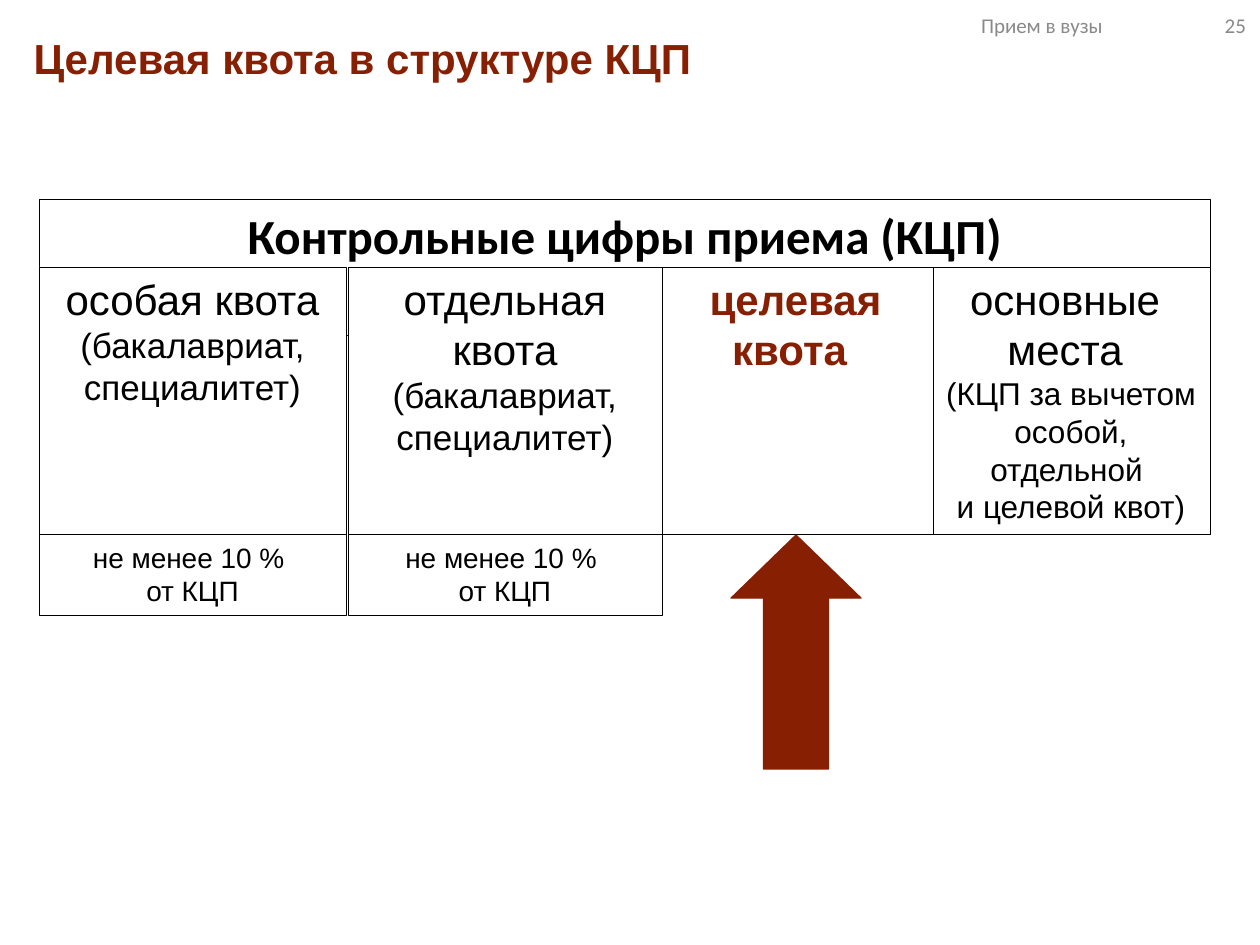
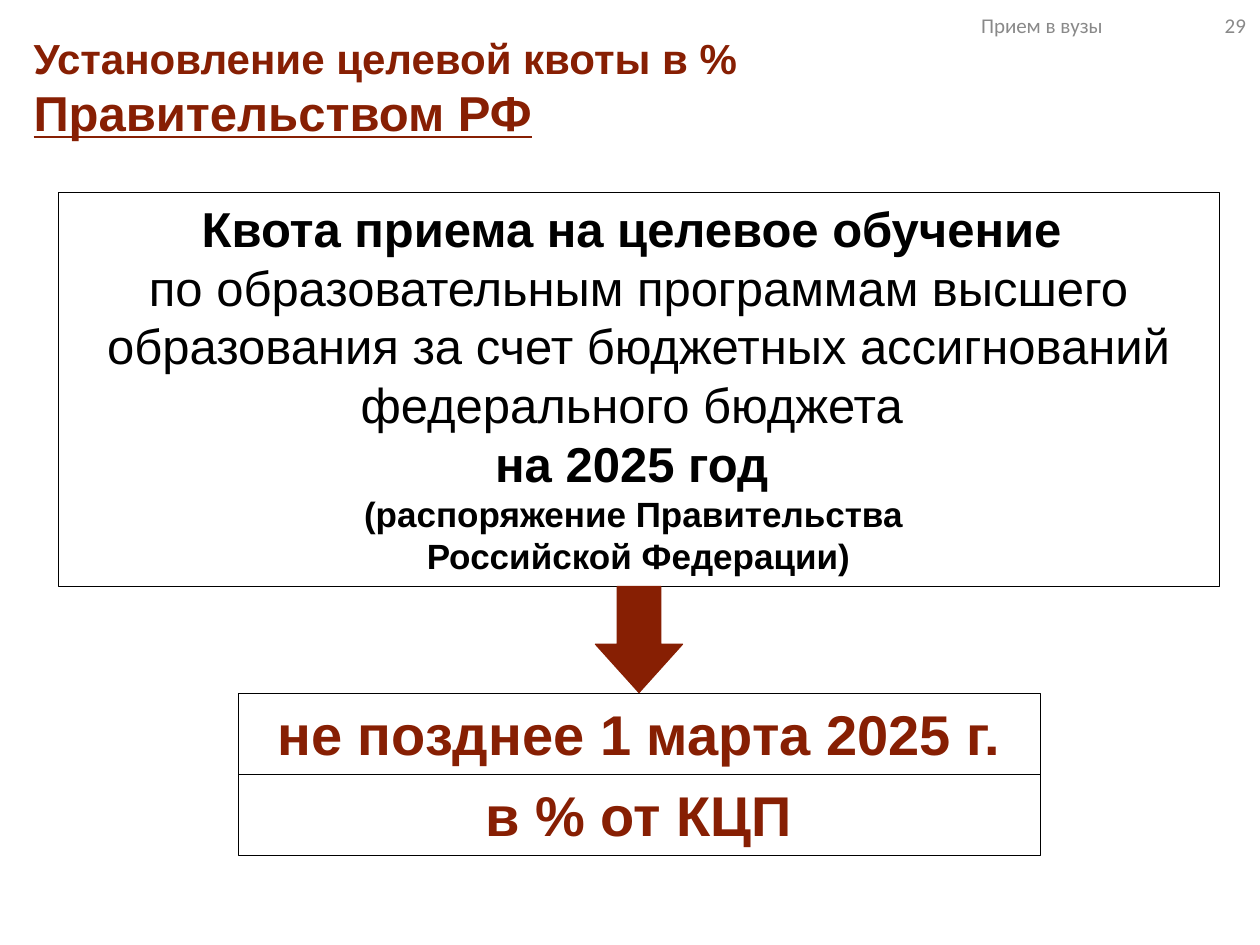
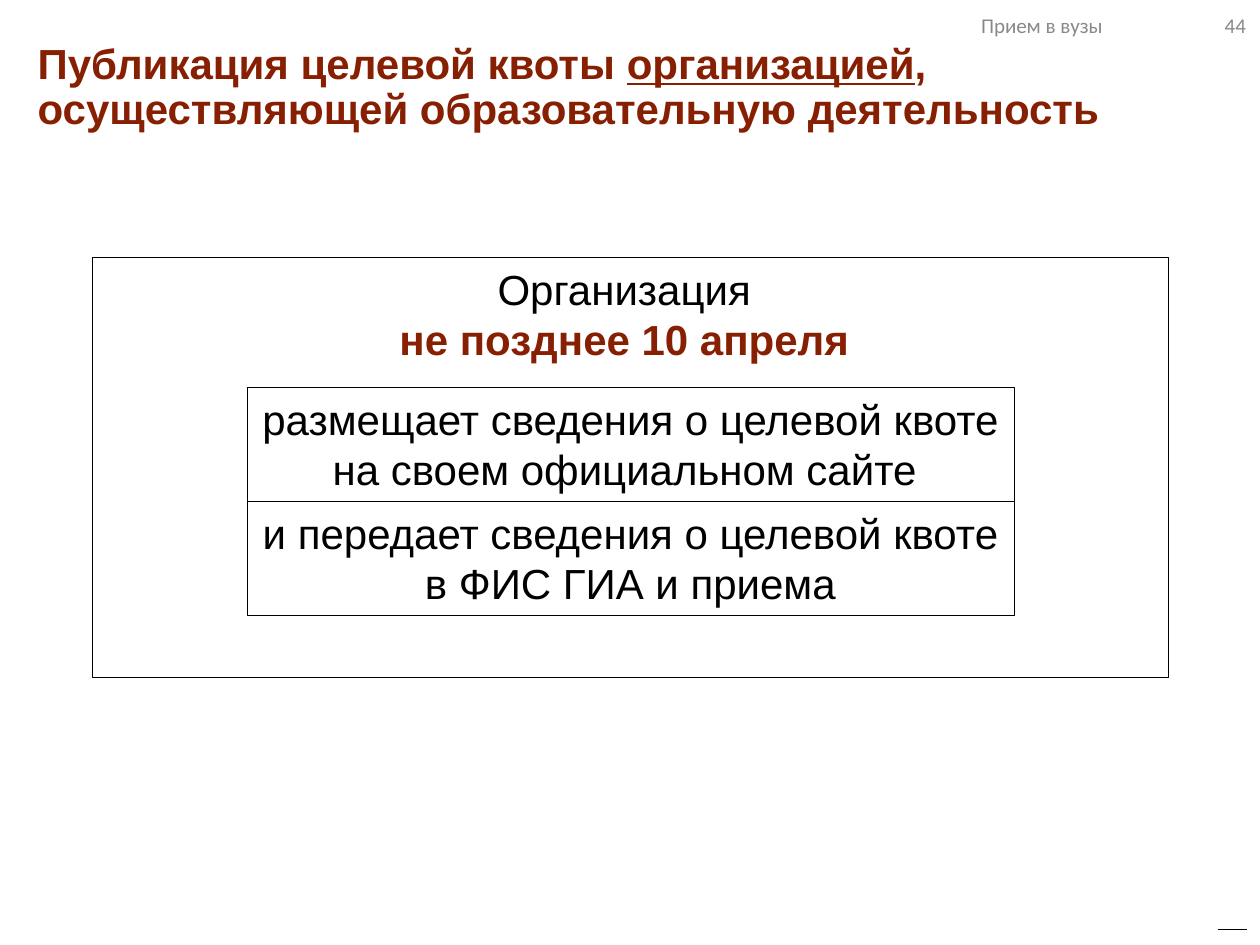
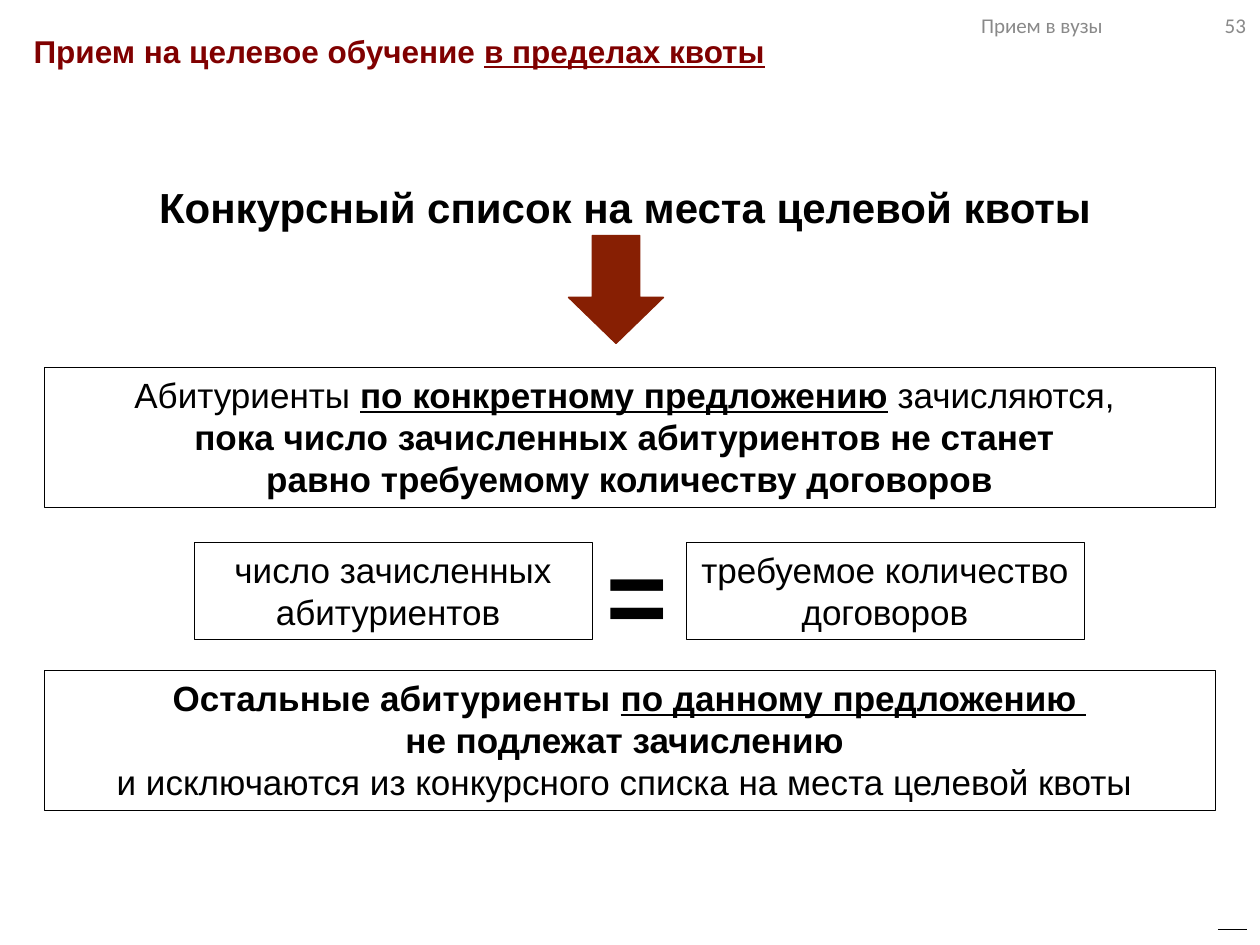
from lxml.etree import SubElement
from pptx import Presentation
from pptx.dml.color import RGBColor
from pptx.enum.shapes import MSO_CONNECTOR, MSO_SHAPE
from pptx.enum.text import MSO_ANCHOR, MSO_AUTO_SIZE, PP_ALIGN
from pptx.oxml.ns import qn
from pptx.util import Emu, Pt

WIDTH, HEIGHT = 1260, 945
EMU_PER_PX = 914400 / 126

BLACK = RGBColor(0x00, 0x00, 0x00)
WHITE = RGBColor(0xFF, 0xFF, 0xFF)
GRAY = RGBColor(0x89, 0x89, 0x89)
BRICK = RGBColor(0x87, 0x1F, 0x03)
MAROON = RGBColor(0x80, 0x00, 0x00)

BODY = dict(name="Arial", size=20, color=BLACK, bold=False, underline=False)
TITLE = dict(BODY, size=24, color=BRICK, bold=True)
FOOTER = dict(BODY, name="Calibri", size=12, color=GRAY)
BOLD = dict(bold=True)
UNDERLINE = dict(underline=True)

TITLE_BOX = (21, 26, 1235, 59)
FOOTER_BOX = (888, 0, 372, 50)
FOOTER_INSET, FOOTER_TAB = 93, 265


def px(n):
    return Emu(round(n * EMU_PER_PX))


def place(box):
    return [px(n) for n in box]


def write(tf, paragraphs, base=BODY, align=PP_ALIGN.CENTER, spacing=None):
    """Fill a frame; a paragraph is a string or a list of (text, format) runs."""
    tf.word_wrap = True
    for i, runs in enumerate(paragraphs):
        p = tf.paragraphs[0] if i == 0 else tf.add_paragraph()
        p.alignment, p.line_spacing = align, spacing
        for text, changes in [(runs, {})] if isinstance(runs, str) else runs:
            r = p.add_run()
            r.text = text
            for key, value in (base | changes).items():
                if key == "color":
                    r.font.color.rgb = value
                else:
                    setattr(r.font, key, Pt(value) if key == "size" else value)


def add_box(s, box, paragraphs, border=True, **changes):
    sp = s.shapes.add_shape(MSO_SHAPE.RECTANGLE, *place(box))
    sp.shadow.inherit = False
    sp.fill.solid()
    sp.fill.fore_color.rgb = WHITE
    if border:
        sp.line.color.rgb = BLACK
        sp.line.width = Pt(0.25)
    else:
        sp.line.fill.background()
    tf = sp.text_frame
    tf.vertical_anchor = MSO_ANCHOR.TOP
    write(tf, paragraphs, BODY | changes)
    tf.auto_size = MSO_AUTO_SIZE.SHAPE_TO_FIT_TEXT


def add_stack(s, box, rows, **changes):
    """Equal boxes one under another; box gives the first."""
    x, y, w, h = box
    for i, paragraphs in enumerate(rows):
        add_box(s, (x, y + i * h, w, h), paragraphs, **changes)


def add_arrow(s, box, rotation, head):
    sp = s.shapes.add_shape(MSO_SHAPE.RIGHT_ARROW, *place(box))
    sp.shadow.inherit = False
    sp.rotation = rotation
    sp.adjustments[0], sp.adjustments[1] = 0.5, head
    sp.fill.solid()
    sp.fill.fore_color.rgb = sp.line.color.rgb = BRICK
    sp.line.width = Pt(0.75)


def add_footer(s, number):
    tf = s.shapes.add_textbox(*place(FOOTER_BOX)).text_frame
    tf.vertical_anchor = MSO_ANCHOR.MIDDLE
    tf.margin_left = px(FOOTER_INSET)
    write(tf, [f"Прием в вузы\t{number}"], FOOTER, PP_ALIGN.LEFT)
    tabs = SubElement(tf.paragraphs[0]._p.get_or_add_pPr(), qn("a:tabLst"))
    SubElement(tabs, qn("a:tab"), pos=str(px(FOOTER_TAB)), algn="r")


def add_corner_line(s):
    line = s.shapes.add_connector(MSO_CONNECTOR.STRAIGHT, *place((1218, 929, 1247, 929)))
    line.line.color.rgb = BLACK
    line.line.width = Pt(0.5)
    SubElement(line._element.spPr, qn("a:effectLst"))


def new_slide(prs, number, title, box=TITLE_BOX, spacing=None, **changes):
    s = prs.slides.add_slide(prs.slide_layouts[5])
    sp = s.shapes.title
    sp.left, sp.top, sp.width, sp.height = place(box)
    tf = sp.text_frame
    tf.vertical_anchor = MSO_ANCHOR.TOP
    tf.auto_size = MSO_AUTO_SIZE.NONE
    write(tf, title, TITLE | changes, PP_ALIGN.LEFT, spacing)
    add_footer(s, number)
    return s


def add_quota_grid(s, box):
    """Heading over four quota columns, the first two with a minimum share below."""
    x, y, w, h = box
    head_h, note_h, tuck = 68, 81, 34
    column_h = h - head_h - note_h
    note = ["не менее 10 % ", "от КЦП"]
    small, levels = dict(size=18), ("(бакалавриат, специалитет)", dict(size=20))
    columns = [
        (0, 307, [[("особая квота ", {}), levels]], note),
        (309, 314, [[("отдельная квота ", {}), levels]], note),
        (619, 275, [[("целевая квота ", dict(bold=True, color=BRICK))]], None),
        (893, 278, ["основные ", "места ", [("(КЦП за вычетом ", small)],
                    [("особой, отдельной ", small)], [("и целевой квот)", small)]], None),
    ]
    add_box(s, (x, y, w, head_h + 2 * tuck), ["Контрольные цифры приема (КЦП)"],
            name="Calibri", size=28, bold=True)
    top = y + head_h
    for dx, width, paragraphs, share in reversed(columns):
        extra = tuck if share else 0
        add_box(s, (x + dx, top, width, column_h + extra), paragraphs, size=24)
        if share:
            add_box(s, (x + dx, top + column_h, width, note_h), share, size=16)


def add_equation(s, box):
    """Two equal boxes with an equals sign between them."""
    x, y, w, h = box
    side = 398
    add_box(s, (x, y, side, h), ["число зачисленных абитуриентов "])
    add_box(s, (x + w - side, y, side, h), ["требуемое количество договоров"])
    sign_w, sign_h = 127, 140
    sign = (x + (w - sign_w) // 2 - 1, y + (h - sign_h) // 2 + 3, sign_w, sign_h)
    tf = s.shapes.add_textbox(*place(sign)).text_frame
    write(tf, ["="], BODY | dict(size=60, bold=True))


def structure_slide(prs):
    s = new_slide(prs, 25, ["Целевая квота в структуре КЦП"])
    add_quota_grid(s, (39, 199, 1171, 416))
    add_arrow(s, (679, 587, 234, 130), 270, 0.485)


def government_slide(prs):
    s = new_slide(prs, 29, ["Установление целевой квоты в %",
                            [("Правительством РФ", dict(size=28, underline=True))]])
    decree = dict(size=20, bold=True)
    add_box(s, (58, 192, 1161, 394), [
        [("Квота приема на целевое обучение ", BOLD)],
        "по образовательным программам высшего образования "
        "за счет бюджетных ассигнований федерального бюджета ",
        [("на 2025 год ", BOLD)],
        [("(распоряжение Правительства ", decree)],
        [("Российской Федерации)", decree)]], size=28)
    add_stack(s, (238, 693, 802, 81), [["не позднее 1 марта 2025 г."], ["в % от КЦП"]],
              size=32, color=BRICK, bold=True)
    add_arrow(s, (586, 596, 106, 87), 90, 0.555)


def publication_slide(prs):
    title = [[("Публикация целевой квоты ", {}), ("организацией", UNDERLINE),
              (", осуществляющей образовательную деятельность", {})]]
    s = new_slide(prs, 44, title, box=(25, 37, 1235, 59), spacing=0.9)
    add_corner_line(s)
    add_box(s, (92, 257, 1076, 420), [
        "Организация ", [("не позднее 10 апреля ", dict(color=BRICK, bold=True))]], size=24)
    add_stack(s, (247, 387, 767, 114), [
        ["размещает сведения о целевой квоте ", "на своем официальном сайте "],
        ["и передает сведения о целевой квоте ", "в ФИС ГИА и приема"]], size=24)


def admission_slide(prs):
    title = [[("Прием на целевое обучение ", {}), ("в пределах квоты", UNDERLINE)]]
    s = new_slide(prs, 53, title, size=18, color=MAROON)
    add_corner_line(s)
    add_box(s, (100, 175, 1062, 63), ["Конкурсный список на места целевой квоты "],
            border=False, size=24, bold=True)
    add_arrow(s, (562, 242, 108, 95), 90, 0.485)
    add_box(s, (44, 367, 1171, 140), [
        [("Абитуриенты ", {}), ("по конкретному предложению", BOLD | UNDERLINE),
         (" зачисляются, ", {})],
        [("пока число зачисленных абитуриентов не станет ", BOLD)],
        [("равно требуемому количеству договоров", BOLD)]])
    add_equation(s, (194, 542, 890, 97))
    add_box(s, (44, 670, 1171, 140), [
        [("Остальные абитуриенты ", BOLD), ("по данному предложению ", BOLD | UNDERLINE)],
        [("не подлежат зачислению ", BOLD)],
        "и исключаются из конкурсного списка на места целевой квоты "])


def main():
    prs = Presentation()
    prs.slide_width, prs.slide_height = px(WIDTH), px(HEIGHT)
    for build in (structure_slide, government_slide, publication_slide, admission_slide):
        build(prs)
    prs.save("out.pptx")


if __name__ == "__main__":
    main()
